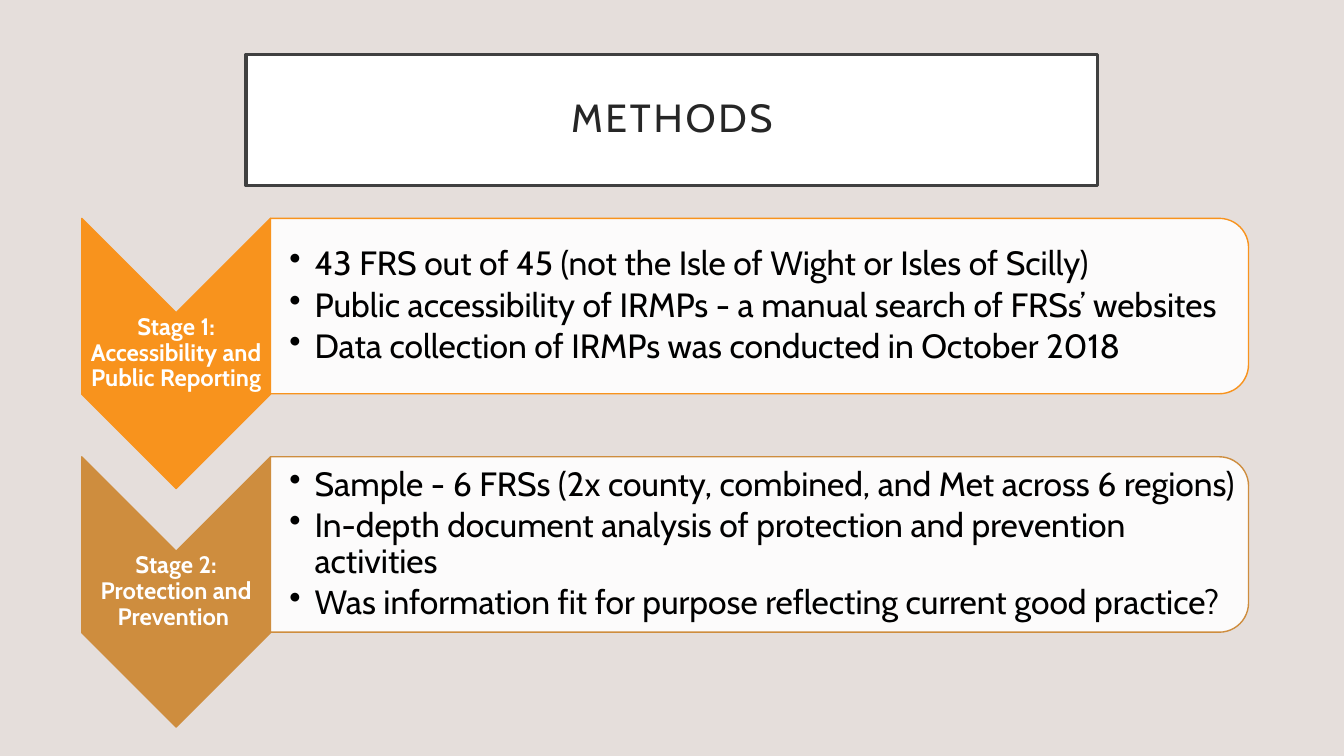
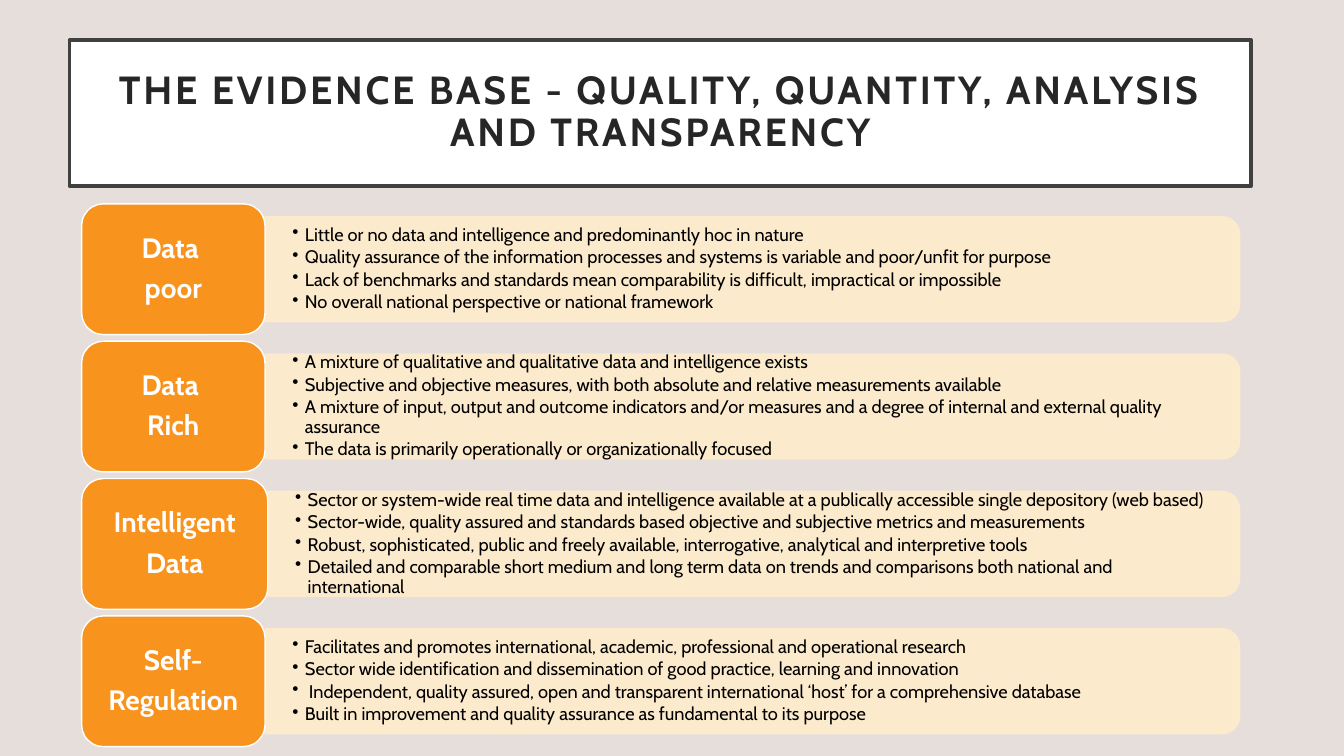
import pptx
import pptx.util
import pptx.dml.color
import pptx.enum.shapes
import pptx.enum.text
import pptx.oxml.ns
import lxml.etree

Pt = pptx.util.Pt
RGBColor = pptx.dml.color.RGBColor
SHAPE = pptx.enum.shapes.MSO_SHAPE
ALIGN = pptx.enum.text.PP_ALIGN
ANCHOR = pptx.enum.text.MSO_ANCHOR
qn = pptx.oxml.ns.qn

FONT = "Cabin"
BACKGROUND = RGBColor(0xE5, 0xDE, 0xDB)
WHITE = RGBColor(0xFF, 0xFF, 0xFF)
BLACK = RGBColor(0x00, 0x00, 0x00)
FRAME = RGBColor(0x40, 0x40, 0x40)
TITLE_INK = RGBColor(0x26, 0x26, 0x26)
ORANGE = RGBColor(0xF8, 0x93, 0x1D)
BRONZE = RGBColor(0xCE, 0x8D, 0x3E)
CREAM = RGBColor(0xFF, 0xEC, 0xCC)

METHODS_TITLE = "METHODS"
STAGES = [
    (ORANGE, "Stage 1: Accessibility and Public Reporting", [
        "43 FRS out of 45 (not the Isle of Wight or Isles of Scilly)",
        "Public accessibility of IRMPs - a manual search of FRSs’ websites",
        "Data collection of IRMPs was conducted in October 2018",
    ]),
    (BRONZE, "Stage 2: Protection and Prevention ", [
        "Sample - 6 FRSs (2x county, combined, and Met across 6 regions)",
        "In-depth document analysis of protection and prevention activities",
        "Was information fit for purpose reflecting current good practice?",
    ]),
]

EVIDENCE_TITLE = "THE EVIDENCE BASE - QUALITY, QUANTITY, ANALYSIS AND TRANSPARENCY"
# Label lines, label width, bullets
LEVELS = [
    (["Data ", "poor"], 131, [
        "Little or no data and intelligence and predominantly hoc in nature",
        "Quality assurance of the information processes and systems is variable and poor/unfit for purpose",
        "Lack of benchmarks and standards mean comparability is difficult, impractical or impossible",
        "No overall national perspective or national framework",
    ]),
    (["Data ", "Rich"], 131, [
        "A mixture of qualitative and qualitative data and intelligence exists",
        "Subjective and objective measures, with both absolute and relative measurements available",
        "A mixture of input, output and outcome indicators and/or measures and a degree of internal "
        "and external quality assurance",
        "The data is primarily operationally or organizationally focused",
    ]),
    (["Intelligent", "Data"], 133, [
        "Sector or system-wide real time data and intelligence available at a publically accessible "
        "single depository (web based)",
        "Sector-wide, quality assured and standards based objective and subjective metrics and measurements",
        "Robust, sophisticated, public and freely available, interrogative, analytical and interpretive tools",
        "Detailed and comparable short medium and long term data on trends and comparisons both "
        "national and international",
    ]),
    (["Self-", "Regulation"], 131, [
        "Facilitates and promotes international, academic, professional and operational research",
        "Sector wide identification and dissemination of good practice, learning and innovation",
        " Independent, quality assured, open and transparent international ‘host’ for a comprehensive database",
        "Built in improvement and quality assurance as fundamental to its purpose",
    ]),
]


def add_box(slide, kind, left, top, width, height, fill, line, line_width=1):
    box = slide.shapes.add_shape(kind, Pt(left), Pt(top), Pt(width), Pt(height))
    box.shadow.inherit = False
    box.fill.solid()
    box.fill.fore_color.rgb = fill
    box.line.color.rgb = line
    box.line.width = Pt(line_width)
    return box


def add_turned_box(slide, kind, left, top, width, height, fill, line):
    """Add a shape turned 90 degrees that covers the given area on the slide."""
    box = add_box(slide, kind, left + (width - height) / 2, top + (height - width) / 2,
                  height, width, fill, line)
    box.rotation = 90
    return box


def set_opacity(box, percent, with_line=False):
    properties = box._element.spPr
    fills = [properties.find(qn("a:solidFill"))]
    if with_line:
        fills.append(properties.find(qn("a:ln")).find(qn("a:solidFill")))
    for fill in fills:
        lxml.etree.SubElement(fill[0], qn("a:alpha"), val=str(percent * 1000))


def add_area(slide, left, top, width, height):
    return slide.shapes.add_textbox(Pt(left), Pt(top), Pt(width), Pt(height))


def write(box, lines, size, color, insets, bold=False, gap=0, bullet_indent=0, tracking=0):
    """Fill a box with paragraphs; gap is the space after each, as a share of the size."""
    frame = box.text_frame
    frame.word_wrap = True
    frame.vertical_anchor = ANCHOR.MIDDLE
    (frame.margin_left, frame.margin_top,
     frame.margin_right, frame.margin_bottom) = (Pt(inset) for inset in insets)
    for index, line in enumerate(lines):
        para = frame.add_paragraph() if index else frame.paragraphs[0]
        para.alignment = ALIGN.LEFT if bullet_indent else ALIGN.CENTER
        para.line_spacing = 0.9
        para.space_after = Pt(size * gap)
        if bullet_indent:
            properties = para._p.get_or_add_pPr()
            properties.set("marL", str(Pt(bullet_indent)))
            properties.set("indent", str(-Pt(bullet_indent)))
            lxml.etree.SubElement(properties, qn("a:buChar"), char="•")
        span = para.add_run()
        span.text = line
        span.font.name = FONT
        span.font.size = Pt(size)
        span.font.bold = bold
        span.font.color.rgb = color
        if tracking:
            span._r.get_or_add_rPr().set("spc", str(tracking * 100))


def add_titled_slide(deck, title, area, bold=False):
    slide = deck.slides.add_slide(deck.slide_layouts[6])
    box = add_box(slide, SHAPE.RECTANGLE, *area, WHITE, FRAME, 2.5)
    write(box, [title], 28, TITLE_INK, [14.4] * 4, bold=bold, tracking=2)
    return slide


def add_methods(deck):
    slide = add_titled_slide(deck, METHODS_TITLE, (175.7, 38.9, 608.4, 93.6))
    left, first_top, pitch = 58.4, 156, 170.3
    chevron_width, chevron_height = 134.8, 193
    panel_left, panel_width, panel_height = left + chevron_width, 698.6, 125.3
    for index, (color, label, bullets) in enumerate(STAGES):
        top = first_top + index * pitch
        add_turned_box(slide, SHAPE.CHEVRON, left, top, chevron_width, chevron_height, color, color)
        caption = add_area(slide, left, top + chevron_width / 2,
                           chevron_width, chevron_height - chevron_width)
        write(caption, [label], 17, WHITE, [0.7] * 4, bold=True)
        panel = add_turned_box(slide, SHAPE.ROUND_2_SAME_RECTANGLE, panel_left, top,
                               panel_width, panel_height, WHITE, color)
        set_opacity(panel, 90)
        area = add_area(slide, panel_left, top + 6, panel_width - 6, panel_height - 12)
        write(area, bullets, 24, BLACK, (13.5, 1.2, 1.2, 1.2), gap=0.15, bullet_indent=18)


def add_evidence(deck):
    slide = add_titled_slide(deck, EVIDENCE_TITLE, (49.7, 28.5, 844, 104.6), bold=True)
    left, first_top, pitch, label_height = 58.3, 145.6, 98.1, 93.4
    panel_right, panel_height, text_height = 885.5, 75, 67.6
    for index, (label, label_width, bullets) in enumerate(LEVELS):
        top = first_top + index * pitch
        middle = top + label_height / 2
        panel_left = left + label_width
        panel_width = panel_right - panel_left
        panel = add_turned_box(slide, SHAPE.ROUND_2_SAME_RECTANGLE, panel_left,
                               middle - panel_height / 2, panel_width, panel_height, CREAM, CREAM)
        set_opacity(panel, 90, with_line=True)
        area = add_area(slide, panel_left, middle - text_height / 2, panel_width - 3.5, text_height)
        write(area, bullets, 13, BLACK, (19.5, 9.75, 19.5, 9.75), gap=0.15, bullet_indent=9)
        box = add_box(slide, SHAPE.ROUNDED_RECTANGLE, left, top, label_width, label_height,
                      ORANGE, WHITE)
        write(box, label, 20, WHITE, (6, 3, 6, 3), bold=True, gap=0.35)


def main():
    deck = pptx.Presentation()
    deck.slide_width, deck.slide_height = Pt(960), Pt(540)
    fill = deck.slide_master.background.fill
    fill.solid()
    fill.fore_color.rgb = BACKGROUND
    add_methods(deck)
    add_evidence(deck)
    deck.save("out.pptx")


if __name__ == "__main__":
    main()
